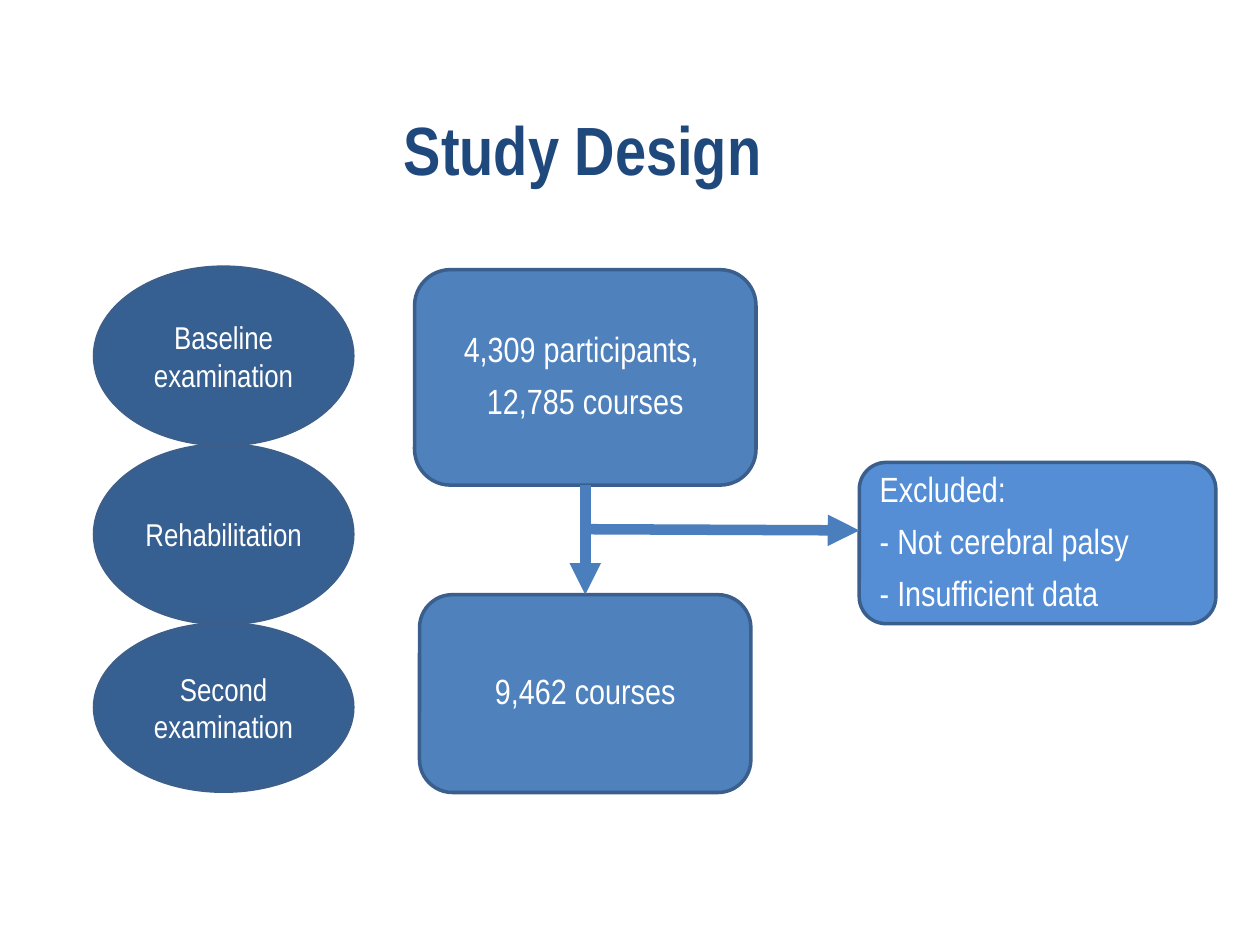
from lxml import etree
from pptx import Presentation
from pptx.dml.color import RGBColor
from pptx.enum.shapes import MSO_CONNECTOR, MSO_SHAPE
from pptx.enum.text import MSO_ANCHOR, MSO_AUTO_SIZE, PP_ALIGN
from pptx.oxml import parse_xml
from pptx.oxml.ns import nsdecls, qn
from pptx.util import Inches, Pt

OVAL, ROUND = MSO_SHAPE.OVAL, MSO_SHAPE.ROUNDED_RECTANGLE
STRAIGHT = MSO_CONNECTOR.STRAIGHT
LEFT, CENTER = PP_ALIGN.LEFT, PP_ALIGN.CENTER
MIDDLE, BOTTOM = MSO_ANCHOR.MIDDLE, MSO_ANCHOR.BOTTOM
NO_FIT = MSO_AUTO_SIZE.NONE

FONT = "Arial Narrow"
NAVY = RGBColor(0x1F, 0x49, 0x7D)
DARK = RGBColor(0x37, 0x60, 0x92)
BLUE = RGBColor(0x4F, 0x81, 0xBD)
LIGHT = RGBColor(0x55, 0x8E, 0xD5)
EDGE = RGBColor(0x3A, 0x5F, 0x8C)
ARROW = RGBColor(0x4B, 0x7E, 0xBC)
WHITE = RGBColor(0xFF, 0xFF, 0xFF)


def write(shape, lines, size=20, color=WHITE, bold=False, align=CENTER,
          anchor=MIDDLE, spacing=0.9, after=8):
    frame = shape.text_frame
    frame.word_wrap = True
    frame.auto_size = NO_FIT
    frame.vertical_anchor = anchor
    for i, line in enumerate(lines):
        para = frame.add_paragraph() if i else frame.paragraphs[0]
        para.alignment = align
        para.line_spacing = spacing
        para.space_before = Pt(0)
        para.space_after = Pt(after)
        run = para.add_run()
        run.text = line
        font = run.font
        font.name, font.size, font.bold = FONT, Pt(size), bold
        font.color.rgb = color


def place(shape, box):
    shape.left, shape.top, shape.width, shape.height = map(Inches, box)


def paint(shape, fill):
    shape.fill.solid()
    shape.fill.fore_color.rgb = fill
    shape.line.color.rgb = EDGE
    shape.line.width = Pt(2)


def add_node(slide, kind, box, fill, lines, **style):
    node = slide.shapes.add_shape(kind, *map(Inches, box))
    node.shadow.inherit = False
    paint(node, fill)
    write(node, lines, **style)


def add_arrow(slide, start, end):
    line = slide.shapes.add_connector(STRAIGHT, *map(Inches, start + end))
    line.line.color.rgb = ARROW
    line.line.width = Pt(6)
    stroke = line.line._get_or_add_ln()
    etree.SubElement(stroke, qn("a:tailEnd"), type="triangle")
    etree.SubElement(line._element.spPr, qn("a:effectLst"))


def add_title(slide, box):
    title = slide.shapes.title
    place(title, box)
    write(title, ["Study Design"], size=39, color=NAVY, bold=True,
          anchor=BOTTOM, spacing=1.0, after=0)


def add_stages(slide, box):
    """Stack the study stages as touching ovals down the box."""
    left, top, width, _ = box
    stages = [("Baseline examination", 1.41), ("Rehabilitation", 1.42),
              ("Second examination", 1.33)]
    for label, height in stages:
        add_node(slide, OVAL, (left, top, width, height), DARK, [label],
                 size=18, spacing=1.0, after=0)
        top += height


def add_flow(slide, box):
    """Put the enrolled courses above the analysed ones, joined by an arrow."""
    left, top, width, height = box
    mid = left + width / 2
    first, last, inset = 1.71, 1.57, 0.04
    lower = top + height - last
    add_node(slide, ROUND, (left + inset, lower, width - 2 * inset, last),
             BLUE, ["9,462 courses"])
    add_node(slide, ROUND, (left, top, width, first), BLUE,
             ["4,309 participants, ", "12,785 courses"])
    add_arrow(slide, (mid, top + first), (mid, lower))


def add_excluded(slide, box, source):
    """Shape the body placeholder as a box with an arrow from source."""
    body = slide.placeholders[1]
    place(body, box)
    outline = parse_xml(
        f'<a:prstGeom {nsdecls("a")} prst="roundRect"><a:avLst/></a:prstGeom>')
    body._element.spPr.append(outline)
    paint(body, LIGHT)
    write(body, ["Excluded:", "- Not cerebral palsy", "- Insufficient data"],
          align=LEFT)
    for para in body.text_frame.paragraphs:
        props = para._p.get_or_add_pPr()
        props.set("marL", "0")
        props.set("indent", "0")
        etree.SubElement(props, qn("a:buNone"))
    left, top = box[:2]
    add_arrow(slide, source, (left, top + 0.54))


def main():
    deck = Presentation()
    deck.slide_width, deck.slide_height = Inches(10), Inches(7.5)
    slide = deck.slides.add_slide(deck.slide_layouts[1])
    add_title(slide, (0.5, 0.13, 8.25, 1.42))
    add_stages(slide, (0.75, 2.12, 2.05, 4.16))
    add_flow(slide, (3.29, 2.14, 2.71, 4.15))
    add_excluded(slide, (6.82, 3.67, 2.83, 1.28), (4.64, 4.2))
    deck.save("out.pptx")


if __name__ == "__main__":
    main()
